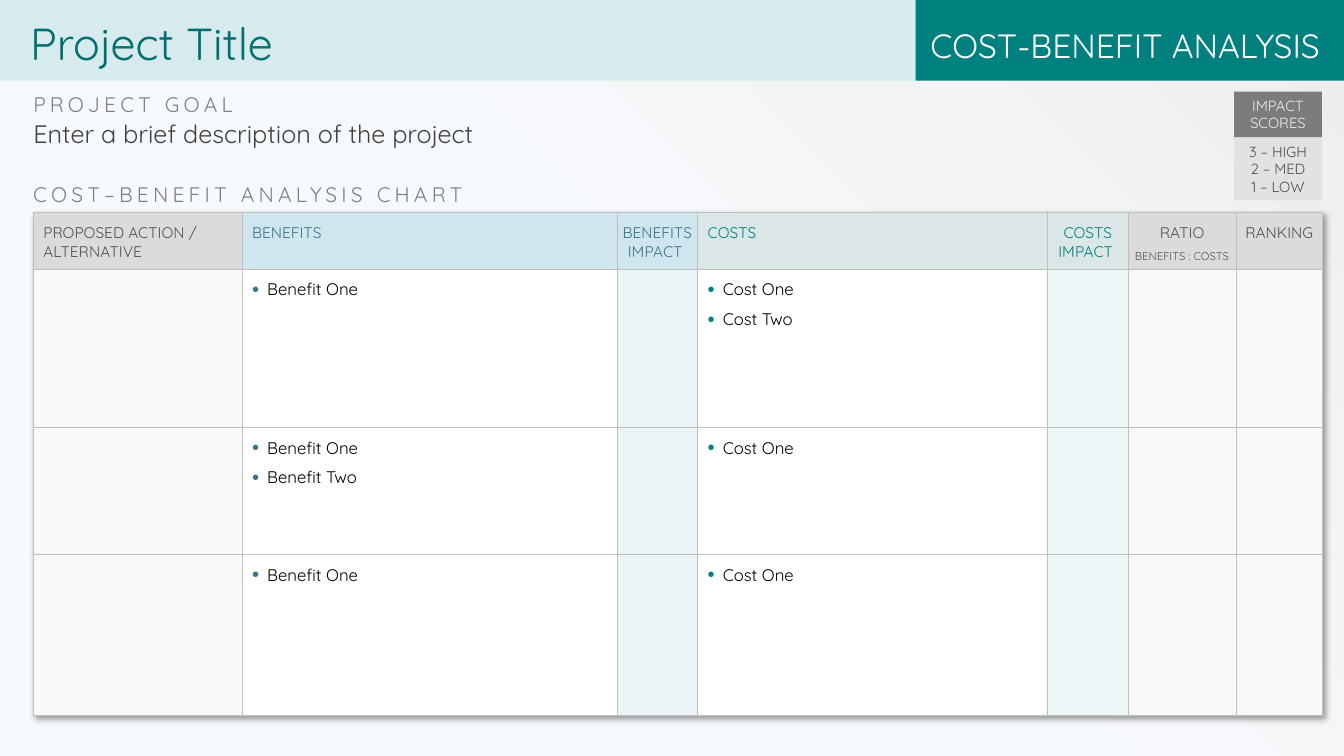
"""Build a cost-benefit analysis slide with a table of benefits, costs and scores."""
from lxml.etree import SubElement
from pptx import Presentation
from pptx.dml.color import RGBColor
from pptx.enum.shapes import MSO_SHAPE
from pptx.enum.text import MSO_ANCHOR, PP_ALIGN
from pptx.oxml.ns import qn
from pptx.util import Inches, Pt

FONT = "Quicksand"
WHITE = RGBColor(0xFF, 0xFF, 0xFF)
BLACK = RGBColor(0, 0, 0)
TEAL = RGBColor(0x01, 0x80, 0x80)
DEEP_TEAL = RGBColor(0, 0x70, 0x70)
COSTS_TEXT = RGBColor(0, 0x80, 0x80)
BLUE = RGBColor(0x3A, 0x74, 0x8C)
CHARCOAL = RGBColor(0x40, 0x40, 0x40)
SLATE = RGBColor(0x52, 0x52, 0x52)
GRAY = RGBColor(0x80, 0x80, 0x80)
SCORE_HEAD = RGBColor(0x7C, 0x7C, 0x7C)
SCORE_BODY = RGBColor(0xE2, 0xE2, 0xE2)
RULE = RGBColor(0xBF, 0xBF, 0xBF)
PALE_GRAY = RGBColor(0xED, 0xED, 0xED)
PALE_BLUE = RGBColor(0xF7, 0xFA, 0xFD)
TITLE_BAND = RGBColor(0xD7, 0xEA, 0xEE)
HEAD_GRAY = RGBColor(0xDB, 0xDB, 0xDB)
HEAD_BLUE = RGBColor(0xCF, 0xE6, 0xEE)
HEAD_TEAL = RGBColor(0xDA, 0xE7, 0xE6)
CELL_GRAY = RGBColor(0xF9, 0xF9, 0xF9)
CELL_BLUE = RGBColor(0xEB, 0xF3, 0xF6)
CELL_TEAL = RGBColor(0xEB, 0xF6, 0xF6)

LEFT, CENTER, RIGHT = PP_ALIGN.LEFT, PP_ALIGN.CENTER, PP_ALIGN.RIGHT
NO_INSETS = (0, 0, 0, 0)
SCORE_INSETS = (0.1, 0.05, 0.1, 0.05)
WIDE_INSETS = (0.1, 0.1, 0.1, 0)
NARROW_INSETS = (0, 0.1, 0, 0)

BANDS = [
    ("COST-BENEFIT ANALYSIS", (9.08, 0, 4.26, 0.8), TEAL,
     dict(size=24, color=WHITE, align=RIGHT, insets=(0, 0.1, 0.25, 0), anchor=MSO_ANCHOR.MIDDLE)),
    ("Project Title", (0, 0, 9.08, 0.8), TITLE_BAND,
     dict(size=32, color=DEEP_TEAL, insets=(0.3, 0.1, 0.2, 0.05), anchor=MSO_ANCHOR.MIDDLE)),
    ("3 – HIGH\n2 – MED\n1 – LOW", (12.24, 1.36, 0.87, 0.63), SCORE_BODY,
     dict(size=10.5, color=SLATE, align=CENTER, insets=SCORE_INSETS, anchor=MSO_ANCHOR.MIDDLE)),
    ("IMPACT SCORES", (12.24, 0.91, 0.87, 0.45), SCORE_HEAD,
     dict(size=10.5, color=PALE_GRAY, align=CENTER, insets=SCORE_INSETS)),
]
LABELS = [
    ("Enter a brief description of the project", (0.33, 1.17, 8.75, 0.51),
     dict(size=18, color=CHARCOAL)),
    ("PROJECT GOAL", (0.33, 0.91, 4.01, 0.35), dict(size=15, color=GRAY, spacing=3)),
    ("COST–BENEFIT ANALYSIS CHART", (0.33, 1.8, 4.8, 0.25),
     dict(size=15, color=GRAY, spacing=3)),
]
COLUMNS = [
    ("PROPOSED ACTION / ALTERNATIVE", 2.07, SLATE, HEAD_GRAY, CELL_GRAY, LEFT),
    ("BENEFITS", 3.72, BLUE, HEAD_BLUE, WHITE, LEFT),
    ("BENEFITS IMPACT ", 0.8, BLUE, HEAD_BLUE, CELL_BLUE, CENTER),
    ("COSTS", 3.47, COSTS_TEXT, HEAD_TEAL, WHITE, LEFT),
    ("COSTS IMPACT ", 0.8, COSTS_TEXT, HEAD_TEAL, CELL_TEAL, CENTER),
    ("RATIO\nBENEFITS : COSTS", 1.07, SLATE, HEAD_GRAY, CELL_GRAY, CENTER),
    ("RANKING", 0.86, SLATE, HEAD_GRAY, CELL_GRAY, CENTER),
]
BULLETS = {1: BLUE, 3: TEAL}
ACTIONS = [
    {1: "Benefit One", 3: "Cost One\nCost Two"},
    {1: "Benefit One\nBenefit Two", 3: "Cost One"},
    {1: "Benefit One", 3: "Cost One"},
]
HEADER_HEIGHT = 0.56
ACTION_HEIGHTS = [1.57, 1.26, 1.6]
TABLE_LEFT, TABLE_TOP = 0.33, 2.11


def write(frame, text, *, size, color, align=LEFT, spacing=0, bullet=None, insets=None, anchor=None):
    """Fill a text frame, one paragraph per line of text."""
    frame.word_wrap = True
    if insets:
        frame.margin_left, frame.margin_top, frame.margin_right, frame.margin_bottom = map(Inches, insets)
    if anchor is not None:
        frame.vertical_anchor = anchor
    for index, line in enumerate(text.split("\n")):
        paragraph = frame.add_paragraph() if index else frame.paragraphs[0]
        paragraph.alignment = align
        run = paragraph.add_run()
        run.text = line
        run.font.name, run.font.size = FONT, Pt(size)
        run.font.color.rgb = color
        if spacing:
            run.font._element.set("spc", str(spacing * 100))
        if bullet is not None:
            add_bullet(paragraph, bullet)


def add_bullet(paragraph, color):
    paragraph.space_after = Pt(6)
    properties = paragraph._p.get_or_add_pPr()
    properties.set("marL", str(Inches(0.15)))
    properties.set("indent", str(-Inches(0.15)))
    SubElement(SubElement(properties, qn("a:buClr")), qn("a:srgbClr"), val=str(color))
    SubElement(properties, qn("a:buSzPct"), val="120000")
    SubElement(properties, qn("a:buFont"), typeface="Arial")
    SubElement(properties, qn("a:buChar"), char="•")


def style_cell(cell, fill, insets):
    properties = cell._tc.get_or_add_tcPr()
    for side in ("lnL", "lnR", "lnT", "lnB"):
        border = SubElement(properties, qn(f"a:{side}"), w=str(Pt(0.5)))
        SubElement(SubElement(border, qn("a:solidFill")), qn("a:srgbClr"), val=str(RULE))
    cell.fill.solid()
    cell.fill.fore_color.rgb = fill
    cell.margin_left, cell.margin_top, cell.margin_right, cell.margin_bottom = map(Inches, insets)


def add_analysis(slide):
    heights = [HEADER_HEIGHT, *ACTION_HEIGHTS]
    widths = [column[1] for column in COLUMNS]
    analysis = slide.shapes.add_table(
        len(heights), len(widths), Inches(TABLE_LEFT), Inches(TABLE_TOP),
        Inches(sum(widths)), Inches(sum(heights))).table
    analysis.first_row = analysis.horz_banding = False
    effects = SubElement(analysis._tbl.tblPr, qn("a:effectLst"))
    analysis._tbl.tblPr.insert(0, effects)
    shadow = SubElement(effects, qn("a:outerShdw"), blurRad=str(Pt(4)), dist=str(Pt(3)),
                        dir="2700000", algn="tl", rotWithShape="0")
    SubElement(SubElement(shadow, qn("a:srgbClr"), val=str(BLACK)), qn("a:alpha"), val="40000")
    for row, height in zip(analysis.rows, heights):
        row.height = Inches(height)
    for col, (heading, width, color, head_fill, body_fill, align) in enumerate(COLUMNS):
        analysis.columns[col].width = Inches(width)
        header = analysis.cell(0, col)
        style_cell(header, head_fill, WIDE_INSETS if align == LEFT else NARROW_INSETS)
        write(header.text_frame, heading, size=11, color=color, align=align)
        for note in header.text_frame.paragraphs[1:]:
            note.line_spacing = 1.5
            note.runs[0].font.size = Pt(8)
        for row, action in enumerate(ACTIONS, 1):
            cell = analysis.cell(row, col)
            style_cell(cell, body_fill, WIDE_INSETS)
            if col in action:
                write(cell.text_frame, action[col], size=12, color=BLACK, bullet=BULLETS[col])


def main():
    deck = Presentation()
    deck.slide_width, deck.slide_height = Inches(13.33), Inches(7.5)
    slide = deck.slides.add_slide(deck.slide_layouts[6])
    backdrop = slide.background.fill
    backdrop.gradient()
    backdrop.gradient_angle = 45
    for stop, position, color in zip(backdrop.gradient_stops, (0.48, 1), (PALE_BLUE, PALE_GRAY)):
        stop.position = position
        stop.color.rgb = color
    for text, place, fill, style in BANDS:
        band = slide.shapes.add_shape(MSO_SHAPE.RECTANGLE, *map(Inches, place))
        band.shadow.inherit = False
        band.fill.solid()
        band.fill.fore_color.rgb = fill
        band.line.fill.background()
        write(band.text_frame, text, **style)
        if "anchor" not in style:
            band.text_frame.vertical_anchor = MSO_ANCHOR.TOP
    for text, place, style in LABELS:
        label = slide.shapes.add_textbox(*map(Inches, place))
        write(label.text_frame, text, insets=NO_INSETS, **style)
    add_analysis(slide)
    deck.save("out.pptx")


if __name__ == "__main__":
    main()
